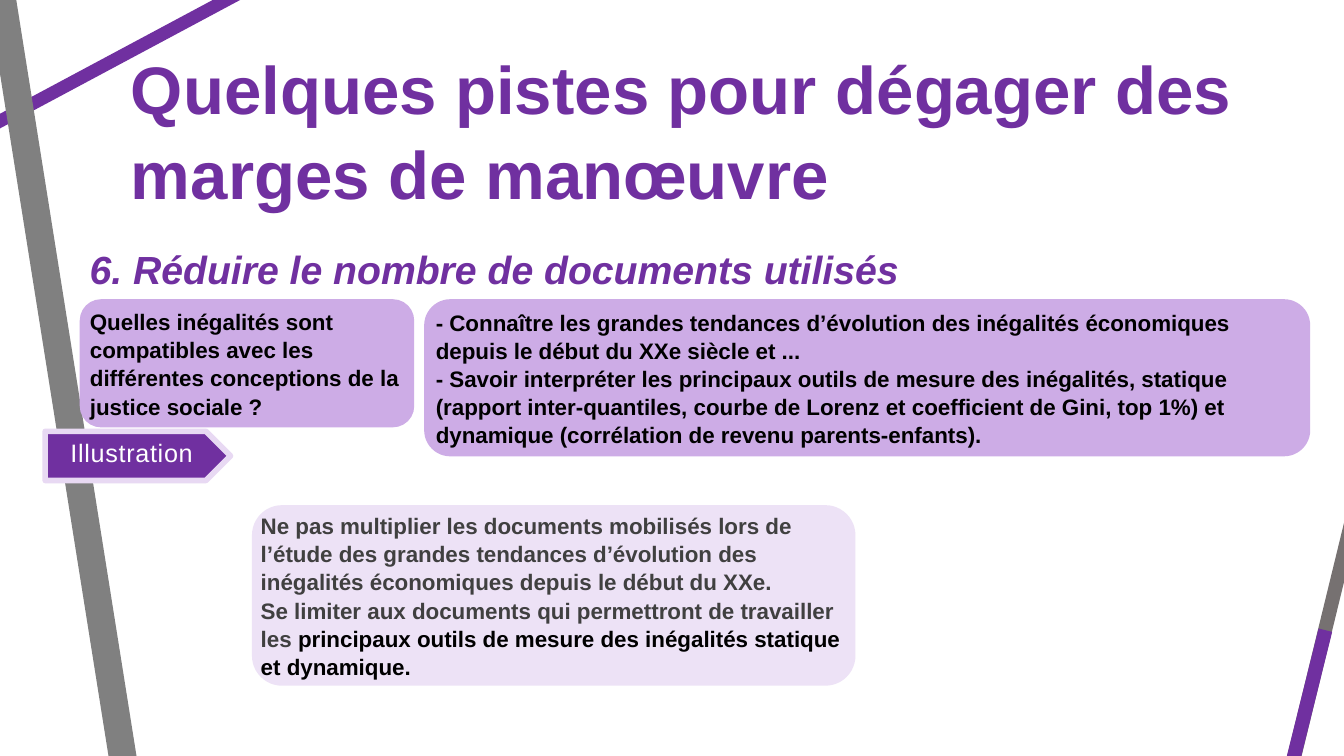
"""Builds the slide on reducing the number of documents used."""
import lxml.etree
import pptx
import pptx.dml.color
import pptx.enum.shapes
import pptx.enum.text
import pptx.oxml.ns
import pptx.util

Cm = pptx.util.Cm
Pt = pptx.util.Pt
RGBColor = pptx.dml.color.RGBColor
MSO_SHAPE = pptx.enum.shapes.MSO_SHAPE
PP_ALIGN = pptx.enum.text.PP_ALIGN
MSO_ANCHOR = pptx.enum.text.MSO_ANCHOR

PURPLE = RGBColor(0x70, 0x30, 0xA0)
LILAC = RGBColor(0xCD, 0xAC, 0xE6)
PALE_LILAC = RGBColor(0xED, 0xE2, 0xF6)
BORDER_LILAC = RGBColor(0xE8, 0xD9, 0xF3)
GREY = RGBColor(0x80, 0x80, 0x80)
WARM_GREY = RGBColor(0x76, 0x71, 0x71)
DARK_GREY = RGBColor(0x40, 0x40, 0x40)
BLACK = RGBColor(0, 0, 0)
WHITE = RGBColor(0xFF, 0xFF, 0xFF)


def set_frame(tf, anchor, left, top, right, bottom):
    tf.word_wrap = True
    tf.auto_size = pptx.enum.text.MSO_AUTO_SIZE.NONE
    tf.vertical_anchor = anchor
    tf.margin_left, tf.margin_top = Cm(left), Cm(top)
    tf.margin_right, tf.margin_bottom = Cm(right), Cm(bottom)


def add_run(p, text, size, color, bold=True, italic=False):
    p.line_spacing = 1.05
    r = p.add_run()
    r.text = text
    r.font.name = "Arial"
    r.font.size = Pt(size)
    r.font.bold = bold
    r.font.italic = italic
    r.font.color.rgb = color
    return r


prs = pptx.Presentation()
prs.slide_width, prs.slide_height = Cm(33.87), Cm(19.05)
s = prs.slides.add_slide(prs.slide_layouts[5])

title = s.shapes.title
title.left, title.top, title.width, title.height = Cm(3.2), Cm(0.99), Cm(29.74), Cm(4.27)
set_frame(title.text_frame, MSO_ANCHOR.TOP, 0.1, 0.1, 0.1, 0.1)
p = title.text_frame.paragraphs[0]
p.alignment = PP_ALIGN.LEFT
add_run(p, "Quelques pistes pour dégager des marges de manœuvre", 48, PURPLE)

stripes = [
    (-5.31, 5.89, 13.11, -3.96, PURPLE, 9.25),
    (0, -0.36, 3.2, 19.76, GREY, 19.75),
    (31.14, 25.12, 34.67, 10.64, WARM_GREY, 10),
    (30.94, 25.78, 33.4, 15.88, PURPLE, 10),
]
for x1, y1, x2, y2, color, width in stripes:
    stripe = s.shapes.add_connector(
        pptx.enum.shapes.MSO_CONNECTOR.STRAIGHT, Cm(x1), Cm(y1), Cm(x2), Cm(y2))
    stripe.line.color.rgb = color
    stripe.line.width = Pt(width)
    lxml.etree.SubElement(stripe._element.spPr, pptx.oxml.ns.qn("a:effectLst"))

subtitle = s.shapes.add_textbox(Cm(2.01), Cm(5.99), Cm(30.99), Cm(1.45))
set_frame(subtitle.text_frame, MSO_ANCHOR.TOP, 0.25, 0.13, 0.25, 0.13)
p = subtitle.text_frame.paragraphs[0]
p.alignment = PP_ALIGN.JUSTIFY
add_run(p, "6. Réduire le nombre de documents utilisés", 28, PURPLE, italic=True)

question = [
    [("Quelles inégalités sont compatibles avec les différentes conceptions "
      "de la justice sociale ?", BLACK)],
]
goals = [
    [("- Connaître les grandes tendances d’évolution des inégalités économiques "
      "depuis le début du XXe siècle et ...", BLACK)],
    [("- Savoir interpréter les principaux outils de mesure des inégalités, statique "
      "(rapport inter-quantiles, courbe de Lorenz et coefficient de Gini, top 1%) et "
      "dynamique (corrélation de revenu parents-enfants).", BLACK)],
]
advice = [
    [("Ne pas multiplier les documents mobilisés lors de l’étude des grandes tendances "
      "d’évolution des inégalités économiques depuis le début du XXe.", DARK_GREY)],
    [("Se limiter aux documents qui permettront de travailler les ", DARK_GREY),
     ("principaux outils de mesure des inégalités statique et dynamique.", BLACK)],
]
cards = [
    (2.01, 7.54, 8.43, 3.23, LILAC, 0.1, question),
    (10.69, 7.54, 22.33, 3.96, LILAC, 0.1, goals),
    (6.35, 12.73, 15.21, 4.55, PALE_LILAC, 0, advice),
]
for x, y, w, h, fill, inset, paragraphs in cards:
    card = s.shapes.add_shape(MSO_SHAPE.ROUNDED_RECTANGLE, Cm(x), Cm(y), Cm(w), Cm(h))
    card.shadow.inherit = False
    card.fill.solid()
    card.fill.fore_color.rgb = fill
    card.line.fill.background()
    tf = card.text_frame
    set_frame(tf, MSO_ANCHOR.MIDDLE, inset, inset, inset, inset)
    for i, runs in enumerate(paragraphs):
        p = tf.add_paragraph() if i else tf.paragraphs[0]
        p.alignment = PP_ALIGN.LEFT
        for text, color in runs:
            add_run(p, text, 16, color)

tag = s.shapes.add_shape(MSO_SHAPE.PENTAGON, Cm(1.14), Cm(10.87), Cm(4.67), Cm(1.24))
tag.shadow.inherit = False
tag.fill.solid()
tag.fill.fore_color.rgb = PURPLE
tag.line.color.rgb = BORDER_LILAC
tag.line.width = Pt(4)
set_frame(tag.text_frame, MSO_ANCHOR.MIDDLE, 0, 0, 0, 0.2)
p = tag.text_frame.paragraphs[0]
p.alignment = PP_ALIGN.CENTER
r = add_run(p, "Illustration", 18, WHITE, bold=False)
r._r.get_or_add_rPr().set("spc", "50")

prs.save("out.pptx")
